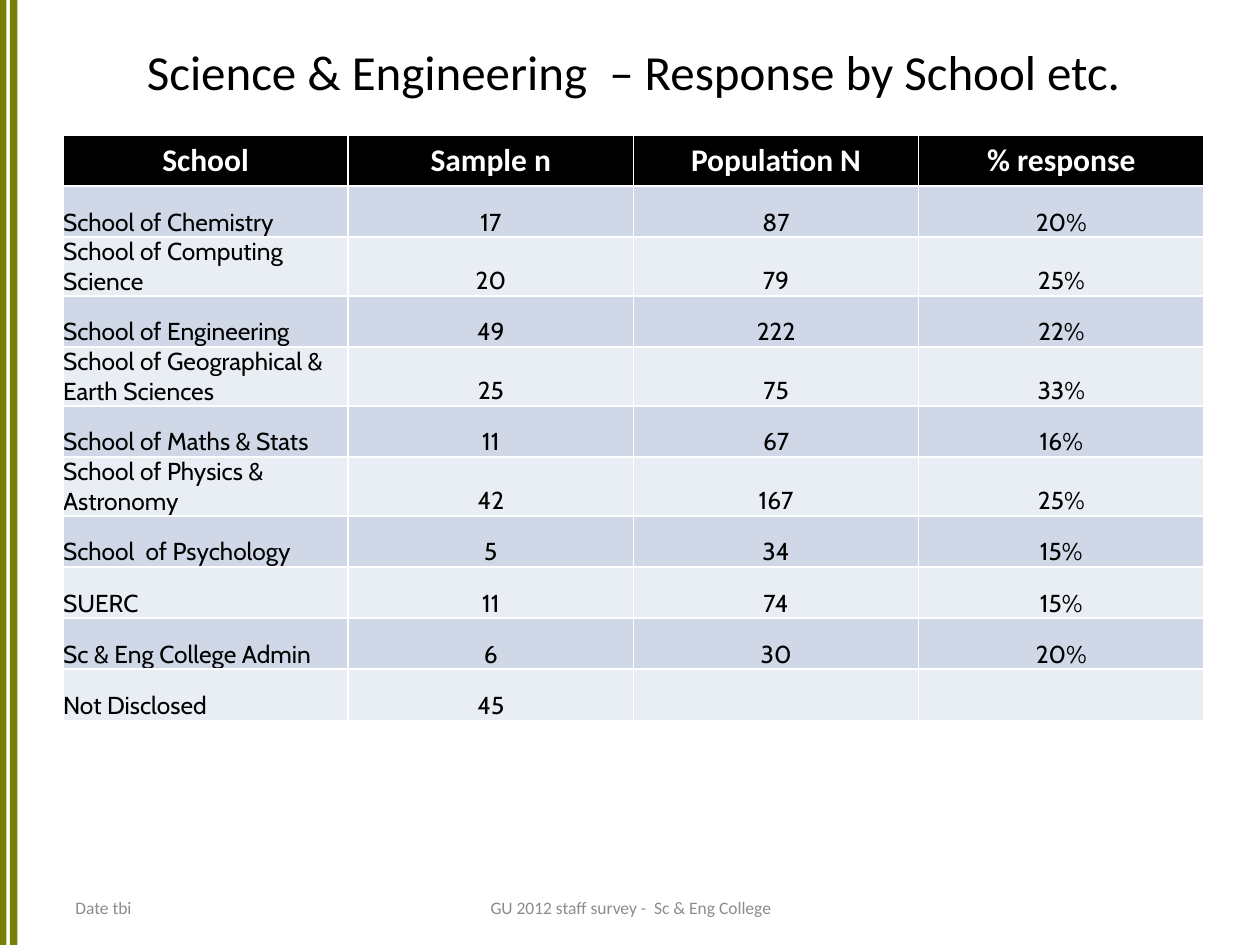
import pptx
import pptx.dml.color
import pptx.enum.shapes
import pptx.enum.text
import pptx.util

Cm = pptx.util.Cm
Align = pptx.enum.text.PP_ALIGN
Anchor = pptx.enum.text.MSO_ANCHOR

HEADINGS = ["School", "Sample n", "Population N", "% response"]
RESPONSES = [
    ("School of Chemistry", "17", "87", "20%"),
    ("School of Computing Science", "20", "79", "25%"),
    ("School of Engineering", "49", "222", "22%"),
    ("School of Geographical & Earth Sciences", "25", "75", "33%"),
    ("School of Maths & Stats", "11", "67", "16%"),
    ("School of Physics & Astronomy", "42", "167", "25%"),
    ("School  of Psychology", "5", "34", "15%"),
    ("SUERC", "11", "74", "15%"),
    ("Sc & Eng College Admin", "6", "30", "20%"),
    ("Not Disclosed", "45", "", ""),
]
BAND_COLORS = ["D0D8E8", "E9EDF4"]


def set_fill(target, color):
    target.fill.solid()
    target.fill.fore_color.rgb = pptx.dml.color.RGBColor.from_string(color)


def write_text(frame, text, size=14, font="Calibri", color="000000",
               bold=False, align=Align.CENTER):
    paragraph = frame.paragraphs[0]
    paragraph.alignment = align
    paragraph.font.size = pptx.util.Pt(size)
    if text:
        run = paragraph.add_run()
        run.text = text
        run.font.name = font
        run.font.size = pptx.util.Pt(size)
        run.font.bold = bold
        run.font.color.rgb = pptx.dml.color.RGBColor.from_string(color)


def add_side_bar(slide, left, height):
    shape = slide.shapes.add_shape(
        pptx.enum.shapes.MSO_SHAPE.RECTANGLE, Cm(left), 0, Cm(0.15), height)
    shape.shadow.inherit = False
    set_fill(shape, "778109")
    shape.line.fill.background()


def add_text_box(slide, text, left, top, width, height, **text_format):
    shape = slide.shapes.add_textbox(Cm(left), Cm(top), Cm(width), Cm(height))
    frame = shape.text_frame
    frame.word_wrap = True
    frame.vertical_anchor = Anchor.MIDDLE
    write_text(frame, text, **text_format)


def add_response_table(slide):
    row_count = len(RESPONSES) + 1
    table = slide.shapes.add_table(
        row_count, len(HEADINGS), Cm(1.27), Cm(2.72),
        Cm(23), Cm(1.03 * row_count)).table
    for column, heading in enumerate(HEADINGS):
        cell = table.cell(0, column)
        set_fill(cell, "000000")
        write_text(cell.text_frame, heading, size=18, color="FFFFFF", bold=True)
    for row, values in enumerate(RESPONSES, start=1):
        for column, value in enumerate(values):
            cell = table.cell(row, column)
            set_fill(cell, BAND_COLORS[(row - 1) % 2])
            cell.margin_left = cell.margin_right = 0
            cell.margin_top = cell.margin_bottom = 0
            cell.vertical_anchor = Anchor.BOTTOM
            write_text(cell.text_frame, value, font="Cabin",
                       align=Align.CENTER if column else Align.LEFT)


def main():
    presentation = pptx.Presentation()
    presentation.slide_width = Cm(25.4)
    presentation.slide_height = Cm(19.05)
    slide = presentation.slides.add_slide(presentation.slide_layouts[6])
    for left in (0.2, -0.02):
        add_side_bar(slide, left, presentation.slide_height)
    add_text_box(slide, "Science & Engineering  – Response by School etc.",
                 1.27, 0.33, 23, 2.2, size=28)
    add_response_table(slide)
    add_text_box(slide, "Date tbi", 1.27, 17.93, 5.92, 0.74,
                 size=10, color="8C8C8C", align=Align.LEFT)
    add_text_box(slide, "GU 2012 staff survey -  Sc & Eng College",
                 8.69, 17.93, 8.05, 0.74, size=10, color="8C8C8C")
    presentation.save("out.pptx")


if __name__ == "__main__":
    main()
